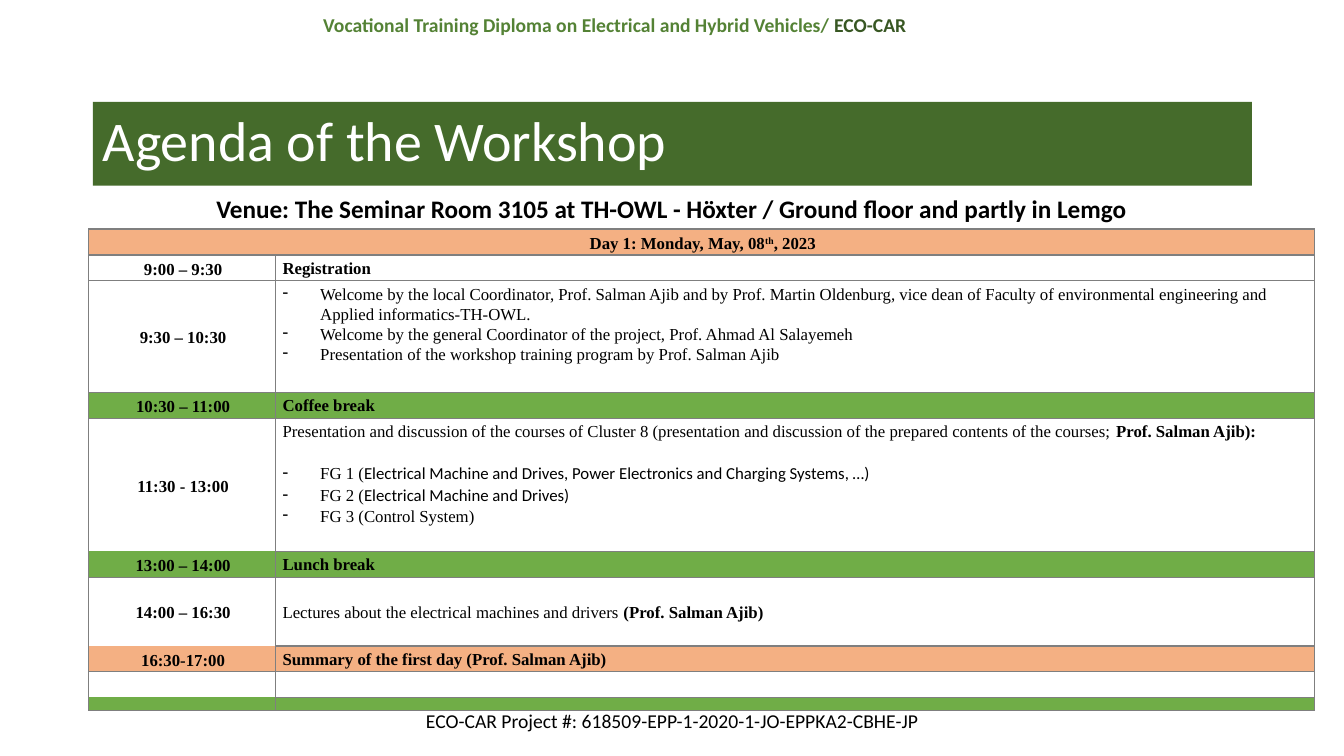
from dataclasses import dataclass

import lxml.etree
import pptx
import pptx.dml.color
import pptx.enum.shapes
import pptx.enum.text
import pptx.oxml.ns
import pptx.util

Cm = pptx.util.Cm
Pt = pptx.util.Pt
qn = pptx.oxml.ns.qn
ALIGN = pptx.enum.text.PP_ALIGN
ANCHOR = pptx.enum.text.MSO_ANCHOR

COLORS = {
    "black": "000000",
    "white": "FFFFFF",
    "title": "456B2B",
    "header": "548235",
    "header_dark": "385723",
    "break": "70AD47",
    "day": "F4B083",
    "border": "7F7F7F",
}
SERIF = "Times New Roman"
SANS = "Calibri"


@dataclass
class Run:
    text: str
    bold: bool = False
    font: str = SERIF
    size: float = 12
    color: str = "black"
    raised: bool = False


@dataclass
class Para:
    runs: list[Run]
    align: ALIGN = ALIGN.LEFT
    dash: bool = False
    before: float = 0
    after: float = 0
    spacing: float = 1.07


@dataclass
class Box:
    left: float
    top: float
    width: float
    height: float
    para: Para
    fill: str = ""
    anchor: ANCHOR = ANCHOR.TOP


@dataclass
class Session:
    time: str
    paras: list[Para]
    height: float
    fill: str = "white"
    anchor: ANCHOR = ANCHOR.TOP
    joins_next: bool = False
    empty_size: float = 12


def rgb(name: str) -> pptx.dml.color.RGBColor:
    return pptx.dml.color.RGBColor.from_string(COLORS[name])


def bold(text: str) -> Para:
    return Para([Run(text, True)])


def dash(*runs: Run, before: float = 0) -> Para:
    return Para(list(runs), dash=True, before=before)


def write(tf, paras: list[Para]) -> None:
    for i, para in enumerate(paras):
        p = tf.add_paragraph() if i else tf.paragraphs[0]
        p.alignment = para.align
        p.line_spacing = para.spacing
        p.space_before = Pt(para.before)
        p.space_after = Pt(para.after)
        if para.dash:
            ppr = p._p.get_or_add_pPr()
            ppr.set("marL", str(Cm(0.95)))
            ppr.set("indent", str(-Cm(0.95)))
            lxml.etree.SubElement(ppr, qn("a:buChar")).set("char", "-")
        for run in para.runs:
            r = p.add_run()
            r.text = run.text
            r.font.name = run.font
            r.font.size = Pt(run.size)
            r.font.bold = run.bold
            r.font.color.rgb = rgb(run.color)
            if run.raised:
                r._r.get_or_add_rPr().set("baseline", "30000")


def add_box(s, box: Box) -> None:
    place = [Cm(v) for v in (box.left, box.top, box.width, box.height)]
    if box.fill:
        sp = s.shapes.add_shape(pptx.enum.shapes.MSO_SHAPE.RECTANGLE, *place)
        sp.shadow.inherit = False
        sp.fill.solid()
        sp.fill.fore_color.rgb = rgb(box.fill)
        sp.line.fill.background()
    else:
        sp = s.shapes.add_textbox(*place)
    tf = sp.text_frame
    tf.word_wrap = True
    tf.vertical_anchor = box.anchor
    write(tf, [box.para])


def set_borders(cell, hidden: str) -> None:
    tcpr = cell._tc.get_or_add_tcPr()
    for i, side in enumerate("LRTB"):
        ln = lxml.etree.Element(qn(f"a:ln{side}"), w=str(Pt(1)))
        if side in hidden:
            lxml.etree.SubElement(ln, qn("a:noFill"))
        else:
            fill = lxml.etree.SubElement(ln, qn("a:solidFill"))
            lxml.etree.SubElement(fill, qn("a:srgbClr")).set("val", COLORS["border"])
        tcpr.insert(i, ln)


def fill_cell(cell, paras: list[Para], fill: str, anchor: ANCHOR, hidden: str, empty_size: float) -> None:
    cell.margin_left, cell.margin_top = Cm(0.18), Cm(0.08)
    cell.margin_right, cell.margin_bottom = Cm(0.13), Cm(0.03)
    cell.vertical_anchor = anchor
    cell.fill.solid()
    cell.fill.fore_color.rgb = rgb(fill)
    set_borders(cell, hidden)
    if paras:
        write(cell.text_frame, paras)
    else:
        p = cell.text_frame.paragraphs[0]
        lxml.etree.SubElement(p._p, qn("a:endParaRPr")).set("sz", str(int(empty_size * 100)))


def add_agenda(s, sessions: list[Session]) -> None:
    height = sum(session.height for session in sessions)
    frame = s.shapes.add_table(len(sessions), 2, Cm(2.24), Cm(5.77), Cm(30.89), Cm(height))
    table = frame.table
    table.first_row = table.horz_banding = False
    table.columns[0].width, table.columns[1].width = Cm(4.7), Cm(26.19)
    table.cell(0, 0).merge(table.cell(0, 1))
    joined = False
    for i, session in enumerate(sessions):
        table.rows[i].height = Cm(session.height)
        hidden = ("T" if joined else "") + ("B" if session.joins_next else "")
        joined = session.joins_next
        time = [Para([Run(session.time, True)], ALIGN.CENTER)] if session.time else []
        first = time if i else session.paras
        fill_cell(table.cell(i, 0), first, session.fill, ANCHOR.MIDDLE, hidden, session.empty_size)
        second = session.paras if i else []
        fill_cell(table.cell(i, 1), second, session.fill, session.anchor, "", session.empty_size)


BOXES = [
    Box(9.96, 17.65, 13.97, 1.02, Para(
        [Run("ECO-CAR Project #: 618509-EPP-1-2020-1-JO-EPPKA2-CBHE-JP", font=SANS, size=14)],
        ALIGN.CENTER, spacing=1), anchor=ANCHOR.MIDDLE),
    Box(6.15, 0.2, 18.69, 1.45, Para(
        [Run("Vocational Training Diploma on Electrical and Hybrid Vehicles/ ", True, SANS, 14, "header"),
         Run("ECO-CAR", True, SANS, 14, "header_dark")], ALIGN.CENTER, spacing=1)),
    Box(2.34, 2.57, 29.21, 2.11, Para(
        [Run("Agenda of the Workshop", font=SANS, size=40, color="white")], spacing=0.9),
        "title", ANCHOR.MIDDLE),
    Box(3.86, 4.7, 26.14, 1.09, Para(
        [Run("Venue: The Seminar Room 3105 at TH-OWL - Höxter / Ground floor and partly in Lemgo", True, SANS, 18)],
        ALIGN.CENTER, after=8)),
]

SESSIONS = [
    Session("", [Para([Run("Day 1: Monday, May, 08", True), Run("th", True, raised=True),
                       Run(", 2023", True)], ALIGN.CENTER)], 0.63, "day"),
    Session("9:00 – 9:30", [bold("Registration")], 0.63),
    Session("9:30 – 10:30", [
        dash(Run("Welcome by the local Coordinator, Prof. Salman Ajib and by Prof. Martin Oldenburg, vice dean "
                 "of Faculty of environmental engineering and Applied informatics-TH-OWL.")),
        dash(Run("Welcome by the general Coordinator of the project, Prof. Ahmad Al Salayemeh")),
        dash(Run("Presentation of the workshop training program by Prof. Salman Ajib")),
    ], 2.81),
    Session("10:30 – 11:00", [bold("Coffee break")], 0.64, "break"),
    Session("11:30 - 13:00", [
        Para([Run("Presentation and discussion of the courses of Cluster 8 (presentation and discussion of "
                  "the prepared contents of the courses; "), Run("Prof. Salman Ajib):", True)]),
        dash(Run("FG 1 ("), Run("Electrical Machine and Drives, Power Electronics and Charging Systems, …)",
                                font=SANS), before=15),
        dash(Run("FG 2 ("), Run("Electrical Machine and Drives)", font=SANS)),
        dash(Run("FG 3 (Control System)")),
    ], 3.35, joins_next=True),
    Session("13:00 – 14:00", [bold("Lunch break")], 0.63, "break"),
    Session("14:00 – 16:30", [
        Para([Run("Lectures about the electrical machines and drivers "), Run("(Prof. Salman Ajib)", True)]),
    ], 1.73, anchor=ANCHOR.MIDDLE, joins_next=True),
    Session("16:30-17:00", [bold("Summary of the first day (Prof. Salman Ajib)")], 0.63, "day"),
    Session("", [], 0.64, joins_next=True),
    Session("", [], 0.33, "break", empty_size=5),
]


def main() -> None:
    prs = pptx.Presentation()
    prs.slide_width, prs.slide_height = Cm(33.87), Cm(19.05)
    s = prs.slides.add_slide(prs.slide_layouts[6])
    for box in BOXES:
        add_box(s, box)
    add_agenda(s, SESSIONS)
    prs.save("out.pptx")


if __name__ == "__main__":
    main()
